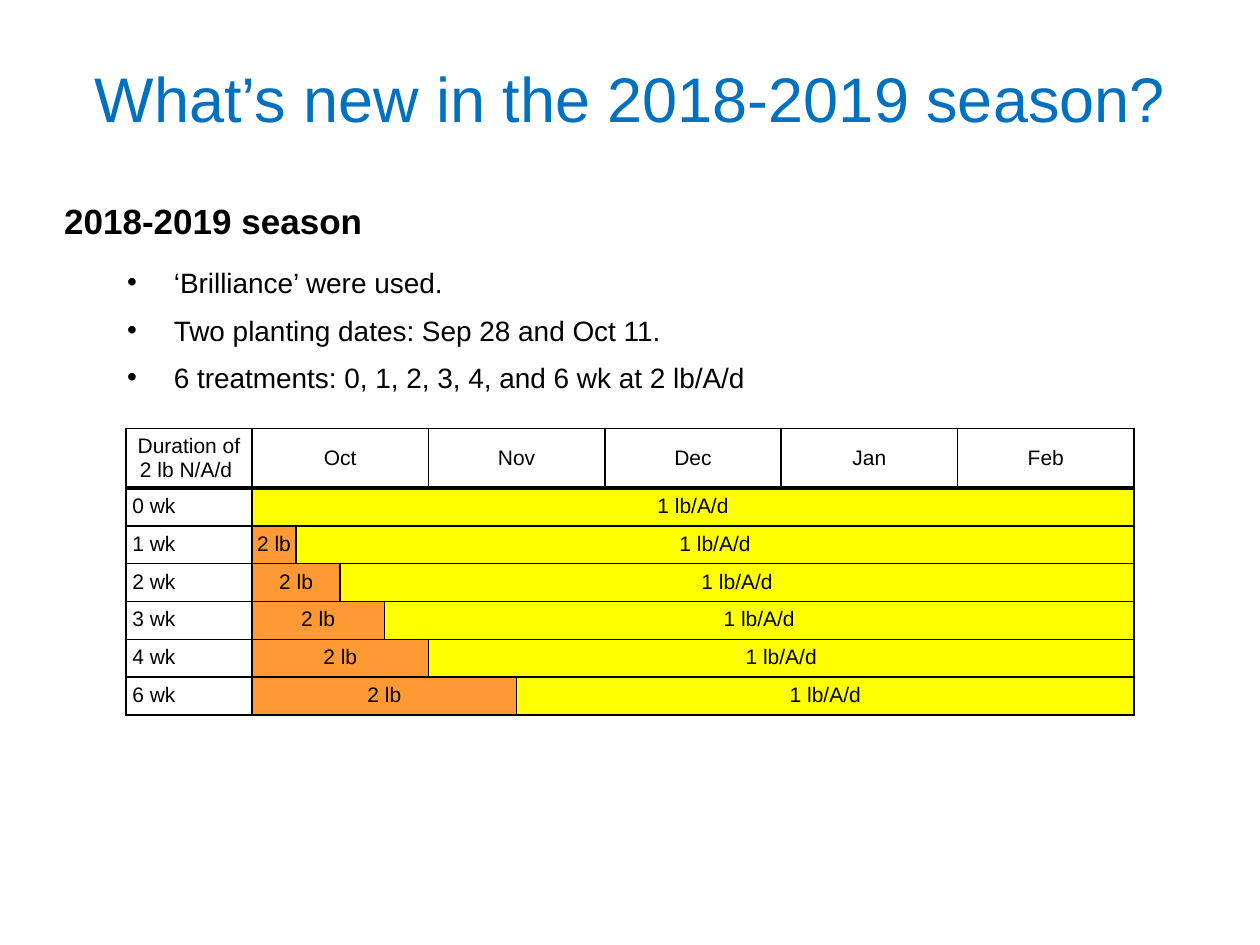
from dataclasses import dataclass

from lxml.etree import SubElement
from pptx import Presentation
from pptx.dml.color import RGBColor
from pptx.enum.shapes import MSO_SHAPE
from pptx.enum.text import MSO_ANCHOR, PP_ALIGN
from pptx.oxml.ns import qn
from pptx.util import Inches, Pt


@dataclass(frozen=True)
class Theme:
    font: str = "Arial"
    black: RGBColor = RGBColor(0, 0, 0)
    title_color: RGBColor = RGBColor(0x00, 0x70, 0xC0)
    low_rate: RGBColor = RGBColor(0xFF, 0xFF, 0x00)
    high_rate: RGBColor = RGBColor(0xFF, 0x99, 0x33)
    title_size: int = 36
    heading_size: int = 20
    bullet_size: int = 16
    table_size: int = 12
    thin_line: int = 1
    thick_line: int = 3


THEME = Theme()
BULLETS = [
    "‘Brilliance’ were used.",
    "Two planting dates: Sep 28 and Oct 11.",
    "6 treatments: 0, 1, 2, 3, 4, and 6 wk at 2 lb/A/d",
]
# Month and the number of grid columns it covers
MONTHS = [("Oct", 4), ("Nov", 2), ("Dec", 1), ("Jan", 1), ("Feb", 1)]
# Duration and the number of grid columns at the high rate
TREATMENTS = [("0 wk", 0), ("1 wk", 1), ("2 wk", 2),
              ("3 wk", 3), ("4 wk", 4), ("6 wk", 5)]
COLUMN_WIDTHS = [1] + [0.35] * 4 + [0.7] * 2 + [1.4] * 3
ROW_HEIGHTS = [0.4] + [0.3] * len(TREATMENTS)


def set_values(target, values):
    for name, value in values.items():
        setattr(target, name, value)


def set_margins(target, horizontal, vertical=0.05):
    for side in ("left", "right"):
        setattr(target, f"margin_{side}", Inches(horizontal))
    for side in ("top", "bottom"):
        setattr(target, f"margin_{side}", Inches(vertical))


def style_font(paragraph, size, color=THEME.black, bold=False):
    for run in paragraph.runs:
        set_values(run.font, {"name": THEME.font, "size": Pt(size), "bold": bold})
        run.font.color.rgb = color


def set_indent(paragraph, left, hanging, bullet=None):
    properties = paragraph._p.get_or_add_pPr()
    properties.set("marL", str(Inches(left)))
    properties.set("indent", str(-Inches(hanging)))
    if bullet:
        SubElement(properties, qn("a:buFont"), typeface=THEME.font)
        SubElement(properties, qn("a:buChar"), char=bullet)


def add_title(slide, text):
    box = slide.shapes.add_textbox(Inches(0.3), Inches(0.3), Inches(9.4), Inches(1.4))
    box.text_frame.word_wrap = True
    paragraph = box.text_frame.paragraphs[0]
    set_values(paragraph, {"text": text, "alignment": PP_ALIGN.CENTER,
                           "line_spacing": 1.2})
    style_font(paragraph, THEME.title_size, THEME.title_color)


def add_season_summary(slide, heading, bullets):
    shape = slide.shapes.add_shape(MSO_SHAPE.ROUNDED_RECTANGLE, Inches(0.5),
                                   Inches(1.5), Inches(9), Inches(1.7))
    shape.adjustments[0] = 0
    shape.shadow.inherit = False
    shape.fill.background()
    shape.line.fill.background()
    frame = shape.text_frame
    set_values(frame, {"word_wrap": True, "vertical_anchor": MSO_ANCHOR.TOP})
    set_margins(frame, 0)

    spacing = {"alignment": PP_ALIGN.LEFT, "line_spacing": 1.1}
    paragraph = frame.paragraphs[0]
    set_values(paragraph, spacing | {"text": heading, "space_after": Pt(12)})
    set_indent(paragraph, 0.5, 0.49)
    style_font(paragraph, THEME.heading_size, bold=True)
    for bullet in bullets:
        paragraph = frame.add_paragraph()
        set_values(paragraph, spacing | {"text": bullet, "space_after": Pt(6)})
        set_indent(paragraph, 0.88, 0.37, "•")
        style_font(paragraph, THEME.bullet_size)


def add_borders(cell, top, bottom):
    properties = cell._tc.get_or_add_tcPr()
    widths = {"lnL": THEME.thin_line, "lnR": THEME.thin_line,
              "lnT": top, "lnB": bottom}
    for tag, width in widths.items():
        line = SubElement(properties, qn(f"a:{tag}"), w=str(Pt(width)))
        fill = SubElement(line, qn("a:solidFill"))
        SubElement(fill, qn("a:srgbClr"), val=str(THEME.black))


def prepare_cells(table):
    """Give every cell its borders and no fill."""
    thin, thick = THEME.thin_line, THEME.thick_line
    for row_index, row in enumerate(table.rows):
        for cell in row.cells:
            add_borders(cell, thick if row_index == 1 else thin,
                        thick if row_index == 0 else thin)
            cell.fill.background()


def fill_cell(table, row, column, text, span=1, color=None, margin=0.05,
              alignment=PP_ALIGN.CENTER, anchor=MSO_ANCHOR.TOP):
    cell = table.cell(row, column)
    if span > 1:
        cell.merge(table.cell(row, column + span - 1))
    if color is not None:
        for offset in range(span):
            fill = table.cell(row, column + offset).fill
            fill.solid()
            fill.fore_color.rgb = color
    cell.text = text
    cell.vertical_anchor = anchor
    set_margins(cell, margin)
    for paragraph in cell.text_frame.paragraphs:
        paragraph.alignment = alignment
        style_font(paragraph, THEME.table_size)


def add_schedule(slide):
    table = slide.shapes.add_table(
        len(ROW_HEIGHTS), len(COLUMN_WIDTHS), Inches(1), Inches(3.4),
        Inches(sum(COLUMN_WIDTHS)), Inches(sum(ROW_HEIGHTS))).table
    set_values(table, {"first_row": False, "horz_banding": False})
    for column, width in zip(table.columns, COLUMN_WIDTHS):
        column.width = Inches(width)
    for row, height in zip(table.rows, ROW_HEIGHTS):
        row.height = Inches(height)
    prepare_cells(table)

    fill_cell(table, 0, 0, "Duration of\n2 lb N/A/d ", anchor=MSO_ANCHOR.MIDDLE)
    column = 1
    for month, span in MONTHS:
        fill_cell(table, 0, column, month, span, margin=0.1,
                  anchor=MSO_ANCHOR.MIDDLE)
        column += span

    rate_columns = len(COLUMN_WIDTHS) - 1
    for row, (duration, high_span) in enumerate(TREATMENTS, start=1):
        fill_cell(table, row, 0, duration, alignment=PP_ALIGN.LEFT)
        if high_span:
            fill_cell(table, row, 1, "2 lb", high_span, THEME.high_rate,
                      margin=0 if high_span == 1 else 0.05)
        fill_cell(table, row, 1 + high_span, "1 lb/A/d",
                  rate_columns - high_span, THEME.low_rate)


def main():
    presentation = Presentation()
    set_values(presentation, {"slide_width": Inches(10), "slide_height": Inches(7.5)})
    slide = presentation.slides.add_slide(presentation.slide_layouts[6])
    add_schedule(slide)
    add_title(slide, "What’s new in the 2018-2019 season?")
    add_season_summary(slide, "2018-2019 season", BULLETS)
    presentation.save("out.pptx")


if __name__ == "__main__":
    main()
